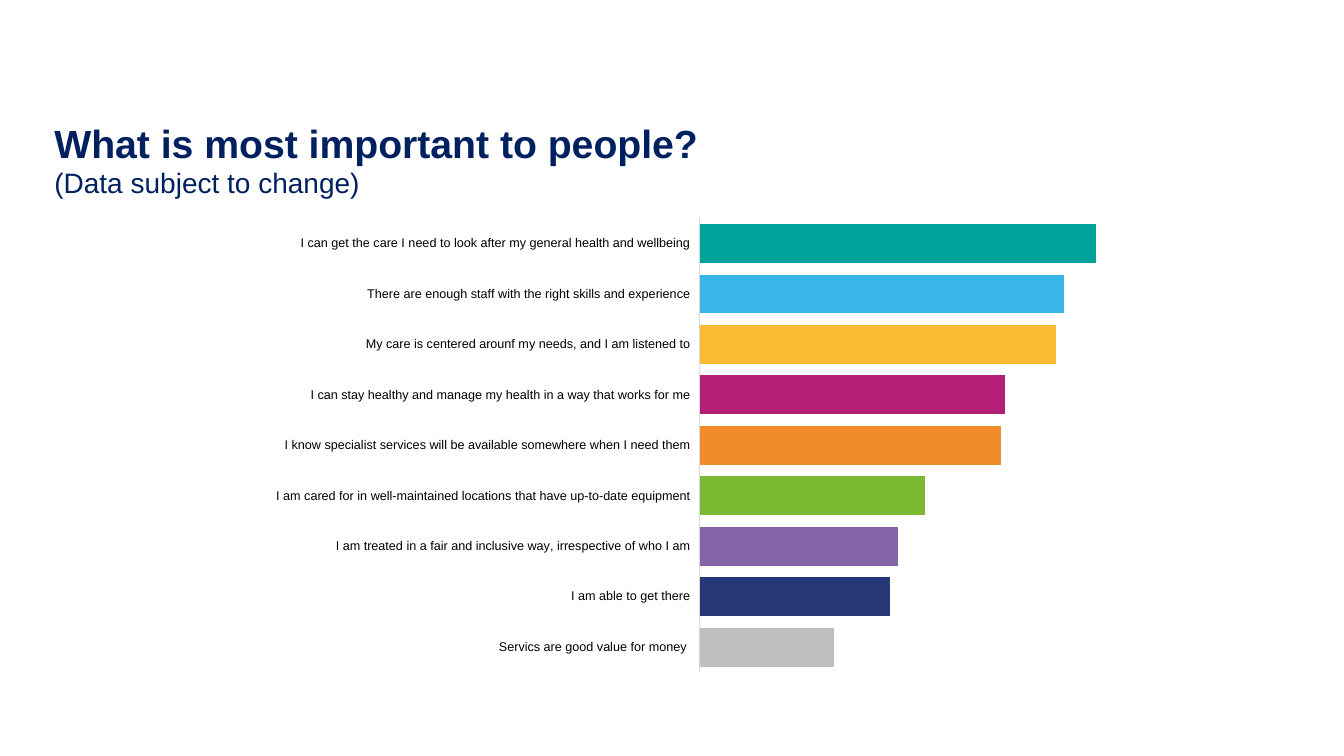
from dataclasses import dataclass

from lxml import etree
from pptx import Presentation
from pptx.chart.chart import Chart
from pptx.chart.data import CategoryChartData
from pptx.dml.color import RGBColor
from pptx.enum.chart import XL_CHART_TYPE, XL_TICK_LABEL_POSITION, XL_TICK_MARK
from pptx.enum.text import MSO_AUTO_SIZE
from pptx.oxml.ns import qn
from pptx.slide import Slide
from pptx.util import Cm, Pt

BAR_CLUSTERED = XL_CHART_TYPE.BAR_CLUSTERED
NO_TICK = XL_TICK_MARK.NONE
LABELS_LOW = XL_TICK_LABEL_POSITION.LOW
FIT_SHAPE = MSO_AUTO_SIZE.SHAPE_TO_FIT_TEXT

FONT = "Arial"
NAVY = RGBColor(0x00, 0x20, 0x60)
BLACK = RGBColor(0x00, 0x00, 0x00)
AXIS_GREY = RGBColor(0xD9, 0xD9, 0xD9)
TEAL = RGBColor(0x00, 0xA3, 0x99)
SKY = RGBColor(0x3A, 0xB5, 0xE9)
YELLOW = RGBColor(0xFB, 0xBA, 0x33)
MAGENTA = RGBColor(0xB2, 0x1F, 0x75)
ORANGE = RGBColor(0xF0, 0x8D, 0x2A)
GREEN = RGBColor(0x7B, 0xB9, 0x33)
PURPLE = RGBColor(0x84, 0x63, 0xA7)
INDIGO = RGBColor(0x25, 0x37, 0x76)
SILVER = RGBColor(0xBF, 0xBF, 0xBF)


@dataclass(frozen=True)
class Priority:
    statement: str
    score: int
    color: RGBColor


@dataclass(frozen=True)
class HeadingLine:
    text: str
    size: int
    bold: bool


HEADING = [
    HeadingLine("What is most important to people?", 28, True),
    HeadingLine("(Data subject to change)", 20, False),
]

# Bars run from the bottom of the chart to the top
PRIORITIES = [
    Priority("Servics are good value for money ", 34, SILVER),
    Priority("I am able to get there", 48, INDIGO),
    Priority("I am treated in a fair and inclusive way, irrespective of who I am", 50, PURPLE),
    Priority("I am cared for in well-maintained locations that have up-to-date equipment", 57, GREEN),
    Priority("I know specialist services will be available somewhere when I need them", 76, ORANGE),
    Priority("I can stay healthy and manage my health in a way that works for me", 77, MAGENTA),
    Priority("My care is centered arounf my needs, and I am listened to", 90, YELLOW),
    Priority("There are enough staff with the right skills and experience", 92, SKY),
    Priority("I can get the care I need to look after my general health and wellbeing", 100, TEAL),
]


def add_heading(slide: Slide) -> None:
    heading = slide.shapes.add_textbox(Cm(1.12), Cm(2.87), Cm(31.65), Cm(2.31))
    frame = heading.text_frame
    frame.word_wrap = True
    frame.auto_size = FIT_SHAPE
    frame.text = "\n".join(line.text for line in HEADING)
    for paragraph, line in zip(frame.paragraphs, HEADING):
        paragraph.font.name = FONT
        paragraph.font.size = Pt(line.size)
        paragraph.font.bold = line.bold
        paragraph.font.color.rgb = NAVY


def place_plot(chart: Chart, x: float, y: float, w: float, h: float) -> None:
    """Fix the inner plot area, in fractions of the chart frame."""
    plot_area = chart.plots[0]._element.getparent()
    for automatic in plot_area.findall(qn("c:layout")):
        plot_area.remove(automatic)
    layout = etree.Element(qn("c:layout"))
    plot_area.insert(0, layout)
    manual = etree.SubElement(layout, qn("c:manualLayout"))
    settings = {"layoutTarget": "inner", "xMode": "edge", "yMode": "edge",
                "x": x, "y": y, "w": w, "h": h}
    for tag, value in settings.items():
        etree.SubElement(manual, qn(f"c:{tag}")).set("val", str(value))


def add_priority_chart(slide: Slide) -> None:
    scores = CategoryChartData()
    scores.categories = [priority.statement for priority in PRIORITIES]
    scores.add_series("Series 1", [priority.score for priority in PRIORITIES])
    chart = slide.shapes.add_chart(
        BAR_CLUSTERED, Cm(5.16), Cm(5.49), Cm(23.55), Cm(12.45), scores).chart
    chart.has_legend = False
    chart.has_title = False
    chart.font.name = FONT
    chart.font.size = Pt(10)
    chart.font.color.rgb = BLACK
    place_plot(chart, 0.53, 0, 0.47, 0.92)

    # Axes
    statements = chart.category_axis
    statements.major_tick_mark = NO_TICK
    statements.minor_tick_mark = NO_TICK
    statements.tick_label_position = LABELS_LOW
    statements.tick_labels.font.name = FONT
    statements.tick_labels.font.size = Pt(9)
    statements.tick_labels.font.color.rgb = BLACK
    statements.format.line.color.rgb = AXIS_GREY
    statements.format.line.width = Pt(0.75)
    score_axis = chart.value_axis
    score_axis.visible = False
    score_axis.has_major_gridlines = False
    score_axis.minimum_scale = 0
    score_axis.maximum_scale = 111

    # Bars
    bars = chart.plots[0]
    bars.gap_width = 30
    bars.vary_by_categories = False
    series = bars.series[0]
    series.format.fill.solid()
    series.format.fill.fore_color.rgb = TEAL
    for index, priority in enumerate(PRIORITIES):
        if priority.color != TEAL:
            fill = series.points[index].format.fill
            fill.solid()
            fill.fore_color.rgb = priority.color


def main() -> None:
    presentation = Presentation()
    presentation.slide_width = Cm(33.87)
    presentation.slide_height = Cm(19.05)
    slide = presentation.slides.add_slide(presentation.slide_layouts[6])
    add_heading(slide)
    add_priority_chart(slide)
    presentation.save("out.pptx")


if __name__ == "__main__":
    main()
